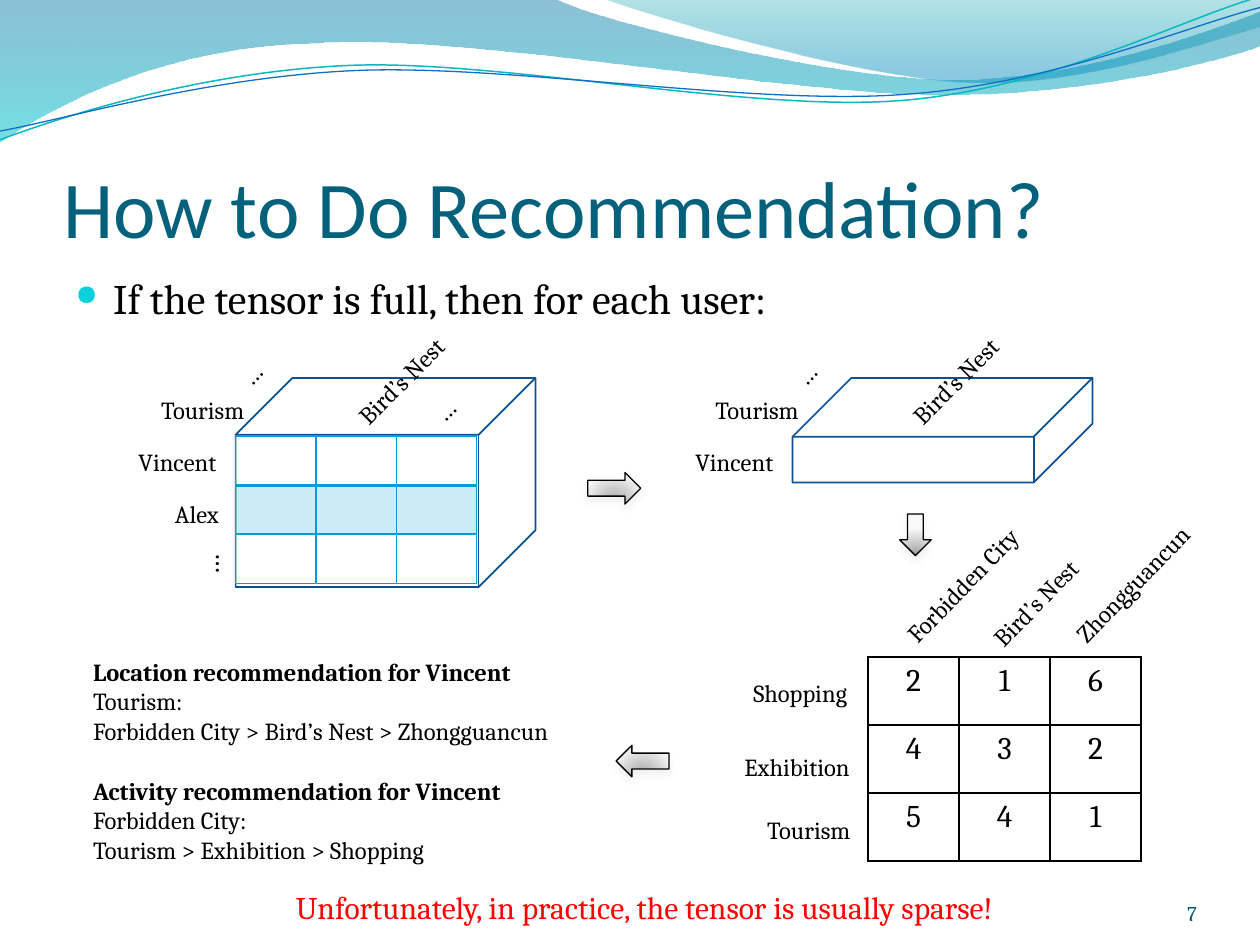
from lxml.etree import SubElement
from pptx import Presentation
from pptx.dml.color import RGBColor
from pptx.enum.shapes import MSO_SHAPE
from pptx.enum.text import MSO_ANCHOR, MSO_AUTO_SIZE, PP_ALIGN
from pptx.oxml import parse_xml
from pptx.oxml.ns import nsdecls, qn
from pptx.util import Inches, Pt

COLS, ROWS = 100, 75  # grid of square cells, a tenth of an inch each
UNIT = Inches(0.1)
LABEL_H = 3.4
BLACK, CUBE_LINE, TABLE_LINE = "000000", "0B5292", "009DD9"
ARROW_STOPS = [(0, "979797", 100), (43, "C6C6C6", 100), (93, "EEEEEE", 100), (100, "F9F9F9", 100)]
LINEAR = '<a:lin ang="5400000" scaled="0"/>'
RADIAL = '<a:path path="circle"><a:fillToRect l="50000" t="130000" r="50000" b="-30000"/></a:path>'


def rgb(value):
    return RGBColor.from_string(value)


def grid(*cells):
    return [round(c * UNIT) for c in cells]


def color_xml(color, alpha=100):
    return f'<a:srgbClr val="{color}"><a:alpha val="{alpha * 1000}"/></a:srgbClr>'


def set_gradient(s, stops, direction):
    s.fill.background()
    props = s._element.spPr
    gs = "".join(f'<a:gs pos="{pos * 1000}">{color_xml(c, a)}</a:gs>' for pos, c, a in stops)
    props.replace(props.find(qn("a:noFill")), parse_xml(
        f'<a:gradFill {nsdecls("a")} rotWithShape="1"><a:gsLst>{gs}</a:gsLst>{direction}</a:gradFill>'))


def set_line(s, color, width):
    s.line.color.rgb = rgb(color)
    s.line.width = Pt(width)


def write(tf, lines, size=14, color=BLACK, font="Cambria", align=None, bold_first=False):
    for i, line in enumerate(lines):
        p = tf.paragraphs[0] if i == 0 else tf.add_paragraph()
        p.alignment = align
        r = p.add_run()
        r.text = line
        form = {"name": font, "size": Pt(size), "bold": bold_first and i == 0}
        for name, value in form.items():
            setattr(r.font, name, value)
        r.font.color.rgb = rgb(color)


def add_text(slide, box, *lines, rotation=0, wrap=False, **form):
    s = slide.shapes.add_textbox(*grid(*box))
    s.rotation = rotation
    s.text_frame.word_wrap = wrap
    s.text_frame.auto_size = MSO_AUTO_SIZE.SHAPE_TO_FIT_TEXT
    write(s.text_frame, lines, **form)
    return s


def add_wave(slide, start, steps, closed=False):
    """Draw a path whose steps are straight (one point) or cubic Bézier (three points)."""
    builder = slide.shapes.build_freeform(*grid(*start), scale=1.0)
    builder.add_line_segments([grid(*p) for step in steps for p in step], close=closed)
    s = builder.convert_to_shape()
    segments = iter(s._element.findall(".//" + qn("a:lnTo")))
    for step in steps:
        parts = [next(segments) for _ in step]
        if len(parts) == 3:
            curve = parse_xml(f'<a:cubicBezTo {nsdecls("a")}/>')
            parts[0].addprevious(curve)
            for part in parts:
                curve.append(part[0])
                part.getparent().remove(part)
    s.shadow.inherit = False
    s.fill.background()
    s.line.fill.background()
    return s


def add_waves(slide):
    s = add_wave(slide, (0, 0), [
        [(44, -0.1)], [(47.6, 1.7), (66.4, 6.3), (75.8, 6.3)],
        [(85.3, 6.3), (95.8, 2.6), (100, 0.9)], [(100.1, 3.6)],
        [(98.3, 4.4), (87, 7.6), (74.6, 7.5)], [(62.2, 7.5), (38.2, 2.8), (25.7, 3.4)],
        [(12.9, 3.6), (4.6, 8.3), (-0.1, 11.3)]], closed=True)
    set_gradient(s, [(0, "0074A1", 45), (100, "00C6CF", 55)], LINEAR)
    s = add_wave(slide, (47.9, -0.1), [
        [(50.9, 1.1), (68.2, 6.2), (76.9, 6.5)], [(85.6, 6.9), (96.1, 3.2), (100, 2.1)],
        [(100, 0)]], closed=True)
    set_gradient(s, [(0, "00A1A9", 30), (80, "008BBF", 45)], LINEAR)
    s = add_wave(slide, (0, 11.1), [
        [(4.8, 9.3), (15.8, 5.7), (27.7, 5.2)], [(39.5, 4.7), (59.3, 8.9), (71.3, 8)],
        [(83.3, 7.1), (93.8, 1.5), (99.8, -0.2)]])
    set_line(s, "0AB8BF", 0.85)
    s = add_wave(slide, (0, 10.4), [
        [(4.7, 9.6), (16.4, 6.1), (28.3, 5.6)], [(40.3, 5.1), (59.7, 8.4), (71.7, 7.5)],
        [(83.6, 6.7), (94.1, 2.1), (100, 0.6)]])
    set_line(s, "0F6FC6", 0.75)


def add_arrow(slide, box, rotation=0, flipped=False):
    s = slide.shapes.add_shape(MSO_SHAPE.RIGHT_ARROW, *grid(*box))
    s.rotation = rotation
    if flipped:
        s._element.spPr.find(qn("a:xfrm")).set("flipH", "1")
    set_gradient(s, ARROW_STOPS, RADIAL)
    set_line(s, BLACK, 0.75)
    s._element.spPr.append(parse_xml(
        f'<a:effectLst {nsdecls("a")}><a:outerShdw blurRad="{Pt(4.5)}" dist="{Pt(3)}" '
        f'dir="5400000" rotWithShape="0">{color_xml(BLACK, 6)}</a:outerShdw></a:effectLst>'))


def add_tensor(slide, left, label_left, height, depth):
    """Draw a cube and the labels that all tensors share."""
    s = slide.shapes.add_shape(MSO_SHAPE.CUBE, *grid(left, 30, 23.8, height))
    s.adjustments[0] = depth
    s.shadow.inherit = False
    s.fill.background()
    set_line(s, CUBE_LINE, 1)
    add_text(slide, (left - 8.7, 35, 8.7, LABEL_H), "Vincent")
    add_text(slide, (label_left, 30.85, 9.1, LABEL_H), "Tourism")
    add_text(slide, (label_left + 14.65, 28.4, 11.1, LABEL_H), "Bird’s Nest", rotation=315)
    add_text(slide, (label_left + 6.3, 27.7, 4.3, LABEL_H), "…", rotation=312.7, wrap=True)


def set_borders(cell, color, top=1, bottom=1):
    widths = {"L": 1, "R": 1, "T": top, "B": bottom}
    for i, (side, width) in enumerate(widths.items()):
        cell._tc.get_or_add_tcPr().insert(i, parse_xml(
            f'<a:ln{side} {nsdecls("a")} w="{Pt(width)}"><a:solidFill>{color_xml(color)}'
            f'</a:solidFill></a:ln{side}>'))


def add_matrix(slide, left, top, cell_w, cell_h, values, color, shaded_row=None, thick_row=None):
    n, m = len(values), len(values[0])
    table = slide.shapes.add_table(n, m, *grid(left, top, m * cell_w, n * cell_h)).table
    table.first_row = table.horz_banding = False
    for i, row in enumerate(values):
        for j, value in enumerate(row):
            cell = table.cell(i, j)
            if value:
                write(cell.text_frame, [value], size=18, align=PP_ALIGN.CENTER)
            else:
                SubElement(cell.text_frame.paragraphs[0]._p, qn("a:endParaRPr"), sz="1600")
            if i == shaded_row:
                cell.fill.solid()
                cell.fill.fore_color.rgb = rgb(color)
                clr = cell._tc.tcPr.find(".//" + qn("a:srgbClr"))
                clr.append(parse_xml(f'<a:alpha {nsdecls("a")} val="20000"/>'))
            else:
                cell.fill.background()
            set_borders(cell, color, top=2 if i - 1 == thick_row else 1,
                        bottom=2 if i == thick_row else 1)


def add_title(slide, text):
    s = slide.shapes.title
    s.left, s.top, s.width, s.height = grid(5, 7.7, 90, 12.5)
    tf = s.text_frame
    frame = {"margin_left": 0, "margin_right": 0, "margin_top": Inches(0.05), "margin_bottom": 0,
             "vertical_anchor": MSO_ANCHOR.BOTTOM, "auto_size": MSO_AUTO_SIZE.NONE}
    for name, value in frame.items():
        setattr(tf, name, value)
    write(tf, [text], size=46, color="04617B", font="Calibri", align=PP_ALIGN.LEFT)


def add_bullet(slide, text):
    s = add_text(slide, (5, 21.1, 90, 48), text, size=24, wrap=True)
    s.text_frame.auto_size = MSO_AUTO_SIZE.NONE
    p = s.text_frame.paragraphs[0]
    p.space_before = Pt(4.8)
    props = p._p.get_or_add_pPr()
    props.set("marL", str(Inches(0.3)))
    props.set("indent", str(-Inches(0.3)))
    for xml in (f'<a:buClr {nsdecls("a")}>{color_xml("0BD0D9")}</a:buClr>',
                f'<a:buSzPct {nsdecls("a")} val="68000"/>',
                f'<a:buChar {nsdecls("a")} char="●"/>'):
        props.append(parse_xml(xml))


def add_page_number(slide, number):
    s = add_text(slide, (86.7, 69.5, 8.3, 4), number, size=12, color="045D75",
                 align=PP_ALIGN.RIGHT, wrap=True)
    tf = s.text_frame
    tf.auto_size, tf.vertical_anchor = MSO_AUTO_SIZE.NONE, MSO_ANCHOR.BOTTOM
    tf.margin_left = tf.margin_right = tf.margin_top = tf.margin_bottom = 0


def main():
    prs = Presentation()
    prs.slide_width, prs.slide_height = grid(COLS, ROWS)
    slide = prs.slides.add_slide(prs.slide_layouts[5])
    add_waves(slide)
    add_title(slide, "How to Do Recommendation?")
    add_bullet(slide, "If the tensor is full, then for each user:")
    add_page_number(slide, "7")

    add_tensor(slide, 18.7, 11.8, 16.6, 0.272)
    add_matrix(slide, 18.7, 34.6, 6.38, 3.9, [[""] * 3] * 3, TABLE_LINE, shaded_row=1, thick_row=0)
    add_text(slide, (12.9, 39.1, 5.8, LABEL_H), "Alex")
    add_text(slide, (14.6, 42.9, 3.8, 3.7), "…", rotation=270, size=16)
    add_text(slide, (33.6, 30.9, 3.4, LABEL_H), "…", rotation=315)
    add_tensor(slide, 62.9, 55.8, 8.3, 0.562)

    add_matrix(slide, 68.9, 52.15, 7.22, 5.4, ["216", "432", "541"], BLACK)
    for left, top, width, place in ((69.4, 44.4, 14.7, "Forbidden City"),
                                    (76.8, 46, 11.1, "Bird’s Nest"),
                                    (82.8, 44.3, 14.9, "Zhongguancun")):
        add_text(slide, (left, top, width, LABEL_H), place, rotation=314.1)
    for left, top, width, activity in ((58.8, 53.3, 10.1, "Shopping"),
                                       (58.1, 59.2, 10.9, "Exhibition"),
                                       (59.9, 64.2, 9.1, "Tourism")):
        add_text(slide, (left, top, width, LABEL_H), activity)

    add_arrow(slide, (46.65, 37.5, 4.2, 2.5))
    add_arrow(slide, (71, 41.2, 3.3, 2.5), rotation=90)
    add_arrow(slide, (48.9, 59.15, 4.2, 2.5), flipped=True)
    add_text(slide, (6.4, 51.65, 40.7, 8.1), "Location recommendation for Vincent", "Tourism:",
             "Forbidden City > Bird’s Nest > Zhongguancun", bold_first=True)
    add_text(slide, (6.4, 61.1, 36.3, 8.1), "Activity recommendation for Vincent",
             "Forbidden City:", "Tourism > Exhibition > Shopping", bold_first=True)
    add_text(slide, (22.5, 70, 60.7, 4), "Unfortunately, in practice, the tensor is usually sparse!",
             size=18, color="FF0000")
    prs.save("out.pptx")


if __name__ == "__main__":
    main()
